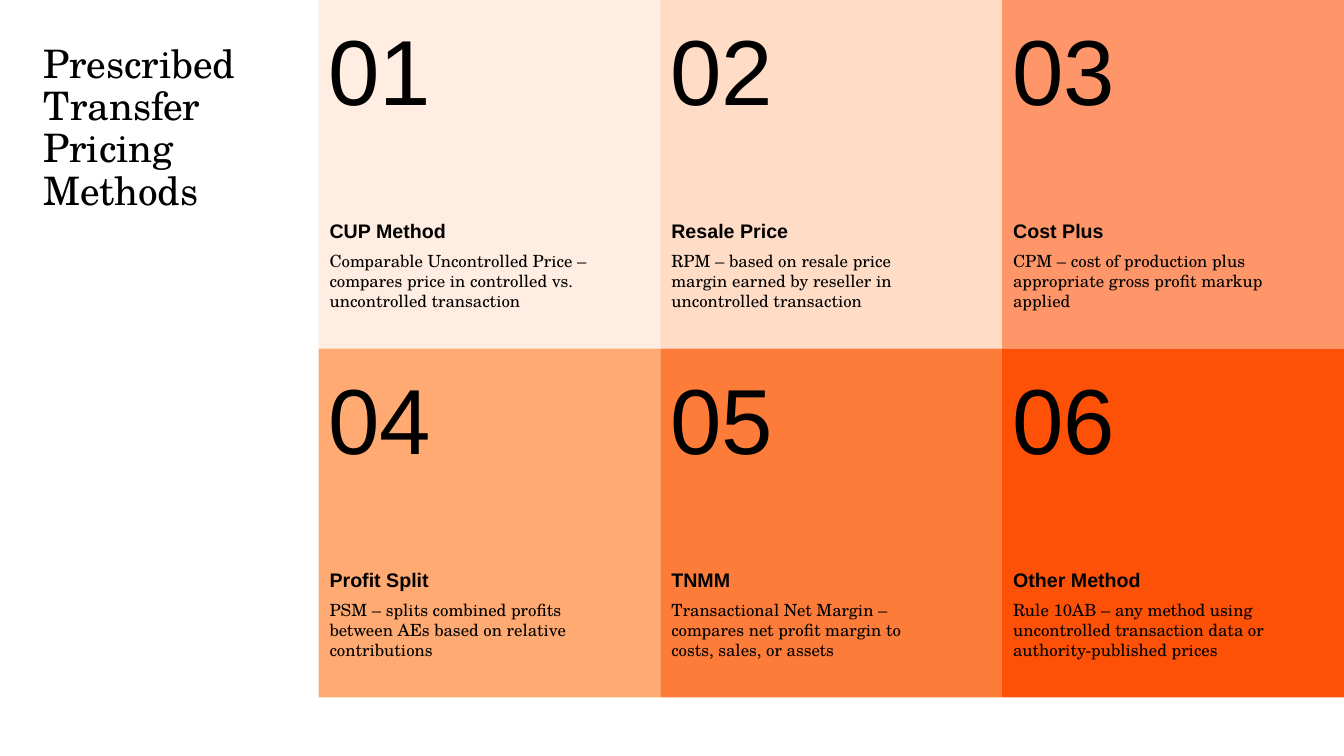
from pptx import Presentation
from pptx.dml.color import RGBColor as Rgb
from pptx.enum.shapes import MSO_SHAPE as Shape
from pptx.enum.text import MSO_ANCHOR as Anchor
from pptx.util import Inches, Pt

SERIF = "TeX Gyre Schola"
SANS = "Arial"
LEFT = 3.16
WIDTH = 3.39
HEIGHT = 3.46
COLS = 3

METHODS = [
    ("FFEDE2", "CUP Method",
     "Comparable Uncontrolled Price – compares price in controlled vs. uncontrolled transaction"),
    ("FFDCC6", "Resale Price",
     "RPM – based on resale price margin earned by reseller in uncontrolled transaction"),
    ("FE9669", "Cost Plus",
     "CPM – cost of production plus appropriate gross profit markup applied"),
    ("FFAA72", "Profit Split",
     "PSM – splits combined profits between AEs based on relative contributions"),
    ("FE7C39", "TNMM",
     "Transactional Net Margin – compares net profit margin to costs, sales, or assets"),
    ("FD5108", "Other Method",
     "Rule 10AB – any method using uncontrolled transaction data or authority-published prices"),
]


def color(code):
    return Rgb.from_string(code)


def add_box(slide, left, top, width, height, inset=(0, 0, 0, 0)):
    """Add an empty text frame; inset is left, top, right, bottom in inches."""
    box = slide.shapes.add_textbox(
        Inches(left), Inches(top), Inches(width), Inches(height))
    frame = box.text_frame
    frame.word_wrap = True
    frame.vertical_anchor = Anchor.TOP
    (frame.margin_left, frame.margin_top,
     frame.margin_right, frame.margin_bottom) = map(Inches, inset)
    return frame


def write(para, text, size, font=SERIF, bold=False, before=None, line=None):
    run = para.add_run()
    run.text = text
    run.font.size = Pt(size)
    run.font.name = font
    run.font.bold = bold
    run.font.color.rgb = color("000000")
    if before is not None:
        para.space_before = Pt(before)
    if line is not None:
        para.line_spacing = line


def add_tile(slide, left, top, fill):
    tile = slide.shapes.add_shape(
        Shape.RECTANGLE, Inches(left), Inches(top), Inches(WIDTH), Inches(HEIGHT))
    tile.shadow.inherit = False
    tile.fill.solid()
    tile.fill.fore_color.rgb = color(fill)
    tile.line.fill.background()


def add_method(slide, index, fill, name, detail):
    row, col = divmod(index, COLS)
    left = LEFT + col * WIDTH
    top = row * HEIGHT
    add_tile(slide, left, top, fill)

    number = add_box(slide, left, top, 2.47, 1.55, (0.1, 0.13, 0.1, 0.05))
    write(number.paragraphs[0], f"{index + 1:02}", 66, SANS)

    body = add_box(slide, left + 0.01, top + 2.17, 2.72, 1.28, (0.1, 0, 0, 0))
    write(body.paragraphs[0], name, 14, SANS, bold=True)
    write(body.add_paragraph(), detail, 12, before=6)


def main():
    deck = Presentation()
    deck.slide_width = Inches(13.33)
    deck.slide_height = Inches(7.5)
    slide = deck.slides.add_slide(deck.slide_layouts[6])

    title = add_box(slide, 0.43, 0.44, 2.46, 3.02)
    write(title.paragraphs[0], "Prescribed Transfer Pricing Methods", 28, line=0.9)

    for index, method in enumerate(METHODS):
        add_method(slide, index, *method)
    deck.save("out.pptx")


if __name__ == "__main__":
    main()
